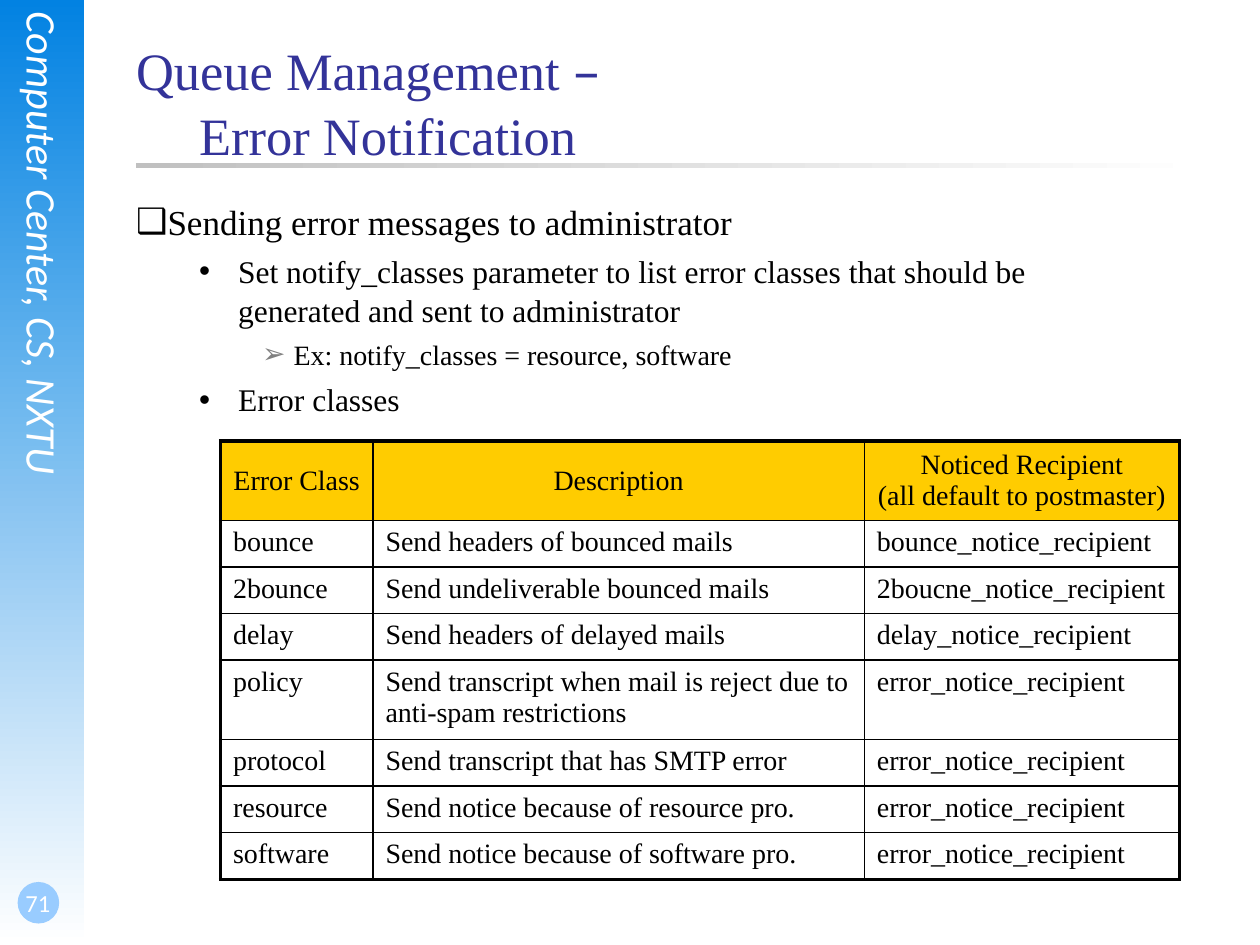
from lxml.etree import SubElement
from pptx import Presentation
from pptx.dml.color import RGBColor
from pptx.enum.shapes import MSO_SHAPE
from pptx.enum.text import MSO_ANCHOR, MSO_AUTO_SIZE, PP_ALIGN
from pptx.oxml import parse_xml
from pptx.oxml.ns import nsdecls, qn
from pptx.util import Inches, Pt

SERIF, SANS, DASH_FONT = "Times New Roman", "Calibri", "DejaVu Sans"
BLACK, WHITE = "000000", "FFFFFF"

# level, text, size, left margin, indent, space before, bullet, bullet colour
BULLETS = [
    (0, "Sending error messages to administrator", 20, 0, 0, 0, "❑", BLACK),
    (1, "Set notify_classes parameter to list error classes that should be "
        "generated and sent to administrator", 18, 0.81, -0.31, 4.5, "•", BLACK),
    (2, "Ex: notify_classes = resource, software", 16, 1.25, -0.25, 4, "➢", "808080"),
    (1, "Error classes", 18, 0.81, -0.31, 4.5, "•", BLACK),
]

ERROR_CLASSES = [
    ("Error Class", "Description", "Noticed Recipient\n(all default to postmaster)"),
    ("bounce", "Send headers of bounced mails", "bounce_notice_recipient"),
    ("2bounce", "Send undeliverable bounced mails", "2boucne_notice_recipient"),
    ("delay", "Send headers of delayed mails", "delay_notice_recipient"),
    ("policy", "Send transcript when mail is reject due to\nanti-spam restrictions",
     "error_notice_recipient"),
    ("protocol", "Send transcript that has SMTP error", "error_notice_recipient"),
    ("resource", "Send notice because of resource pro.", "error_notice_recipient"),
    ("software", "Send notice because of software pro.", "error_notice_recipient"),
]


def color(value):
    return RGBColor.from_string(value)


def add_span(para, text, size, font, fill, italic=False):
    """Add runs to a paragraph, with a line break at each newline."""
    for index, line in enumerate(text.split("\n")):
        if index:
            para.add_line_break()
        if line:
            span = para.add_run()
            span.text = line
            span.font.size = Pt(size)
            span.font.name = font
            span.font.italic = italic
            span.font.color.rgb = color(fill)


def set_frame(frame, anchor=MSO_ANCHOR.TOP, margins=(0, 0, 0, 0)):
    frame.word_wrap = True
    frame.auto_size = MSO_AUTO_SIZE.NONE
    frame.vertical_anchor = anchor
    (frame.margin_left, frame.margin_top,
     frame.margin_right, frame.margin_bottom) = map(Inches, margins)


def place(shape, box):
    shape.left, shape.top, shape.width, shape.height = map(Inches, box)


def add_plain_shape(page, kind, box):
    shape = page.shapes.add_shape(kind, *map(Inches, box))
    shape.shadow.inherit = False
    shape.line.fill.background()
    return shape


def add_gradient_bar(page, box, start, angle):
    """Add a bar that fades from the start colour to white."""
    fill = add_plain_shape(page, MSO_SHAPE.RECTANGLE, box).fill
    fill.gradient()
    fill.gradient_angle = angle
    for stop, position, value in zip(fill.gradient_stops, (0, 1), (start, WHITE)):
        stop.position = position
        stop.color.rgb = color(value)


def add_sidebar(page, box):
    left, top, width, height = box
    add_gradient_bar(page, box, "0282E2", 270)

    label = page.shapes.add_textbox(
        *map(Inches, (left - 2.21, top + 2.45, 5.11, 0.4)))
    label.rotation = 90
    set_frame(label.text_frame)
    add_span(label.text_frame.paragraphs[0], "Computer Center, CS, NXTU",
             24, SANS, WHITE, italic=True)

    dot = add_plain_shape(page, MSO_SHAPE.OVAL,
                          (left + 0.14, top + height - 0.5, 0.33, 0.33))
    dot.fill.solid()
    dot.fill.fore_color.rgb = color("99CCFF")

    number = page.shapes.add_textbox(
        *map(Inches, (left, top + height - 0.67, 0.58, 0.5)))
    set_frame(number.text_frame, MSO_ANCHOR.BOTTOM, (0.02, 0, 0, 0.05))
    para = number.text_frame.paragraphs[0]
    para.alignment = PP_ALIGN.CENTER
    add_span(para, "71", 14, SANS, WHITE)


def fill_title(page, box):
    left, top, width, height = box
    add_gradient_bar(page, (left, top + 1.01, width, 0.04), "C0C0C0", 0)
    title = page.shapes.title
    place(title, box)
    set_frame(title.text_frame)
    para = title.text_frame.paragraphs[0]
    para.alignment = PP_ALIGN.LEFT
    para.line_spacing = 1.04
    for text, font in (("Queue Management ", SERIF), ("–\n", DASH_FONT),
                       ("\tError Notification", SERIF)):
        add_span(para, text, 30, font, "333399")


def set_bullet(para, margin, indent, mark, fill):
    props = para._p.get_or_add_pPr()
    props.set("marL", str(Inches(margin)))
    props.set("indent", str(Inches(indent)))
    bullet_color = SubElement(props, qn("a:buClr"))
    SubElement(bullet_color, qn("a:srgbClr"), val=fill)
    SubElement(props, qn("a:buChar"), char=mark)


def fill_body(page, box):
    body = page.placeholders[1]
    place(body, box)
    frame = body.text_frame
    set_frame(frame)
    for index, (level, text, size, margin, indent, before, mark, fill) in enumerate(BULLETS):
        para = frame.add_paragraph() if index else frame.paragraphs[0]
        para.level = level
        para.line_spacing = 1.04
        para.space_before = Pt(before)
        set_bullet(para, margin, indent, mark, fill)
        add_span(para, text, size, SERIF, BLACK)


def set_borders(cell, outer_sides):
    """Draw thick lines on the outer sides and thin ones on the rest."""
    props = cell._tc.get_or_add_tcPr()
    for index, side in enumerate("LRTB"):
        width = Pt(2.25 if side in outer_sides else 1)
        props.insert(index, parse_xml(
            f'<a:ln{side} {nsdecls("a")} w="{width}"><a:solidFill>'
            f'<a:srgbClr val="{BLACK}"/></a:solidFill></a:ln{side}>'))


def add_error_table(page, left, top):
    widths = (1.21, 3.9, 2.5)
    heights = [0.63 if any("\n" in text for text in row) else 0.37
               for row in ERROR_CLASSES]
    table = page.shapes.add_table(
        len(heights), len(widths),
        *map(Inches, (left, top, sum(widths), sum(heights)))).table
    table.first_row = table.horz_banding = False
    for column, width in zip(table.columns, widths):
        column.width = Inches(width)
    last_row, last_column = len(heights) - 1, len(widths) - 1
    for r, texts in enumerate(ERROR_CLASSES):
        table.rows[r].height = Inches(heights[r])
        for c, text in enumerate(texts):
            cell = table.cell(r, c)
            para = cell.text_frame.paragraphs[0]
            if r == 0:
                cell.fill.solid()
                cell.fill.fore_color.rgb = color("FFCC00")
                cell.vertical_anchor = MSO_ANCHOR.MIDDLE
                para.alignment = PP_ALIGN.CENTER
            else:
                cell.fill.background()
            add_span(para, text, 16, SERIF, BLACK)
            edges = {"L": c == 0, "R": c == last_column,
                     "T": r == 0, "B": r == last_row}
            set_borders(cell, [side for side, outer in edges.items() if outer])


def main():
    deck = Presentation()
    deck.slide_width, deck.slide_height = Inches(10), Inches(7.5)
    page = deck.slides.add_slide(deck.slide_layouts[1])
    add_sidebar(page, (0, 0, 0.67, 7.5))
    fill_title(page, (1.08, 0.28, 8.5, 1.25))
    fill_body(page, (1.08, 1.58, 8.04, 5.08))
    add_error_table(page, 1.75, 3.5)
    deck.save("out.pptx")


if __name__ == "__main__":
    main()
